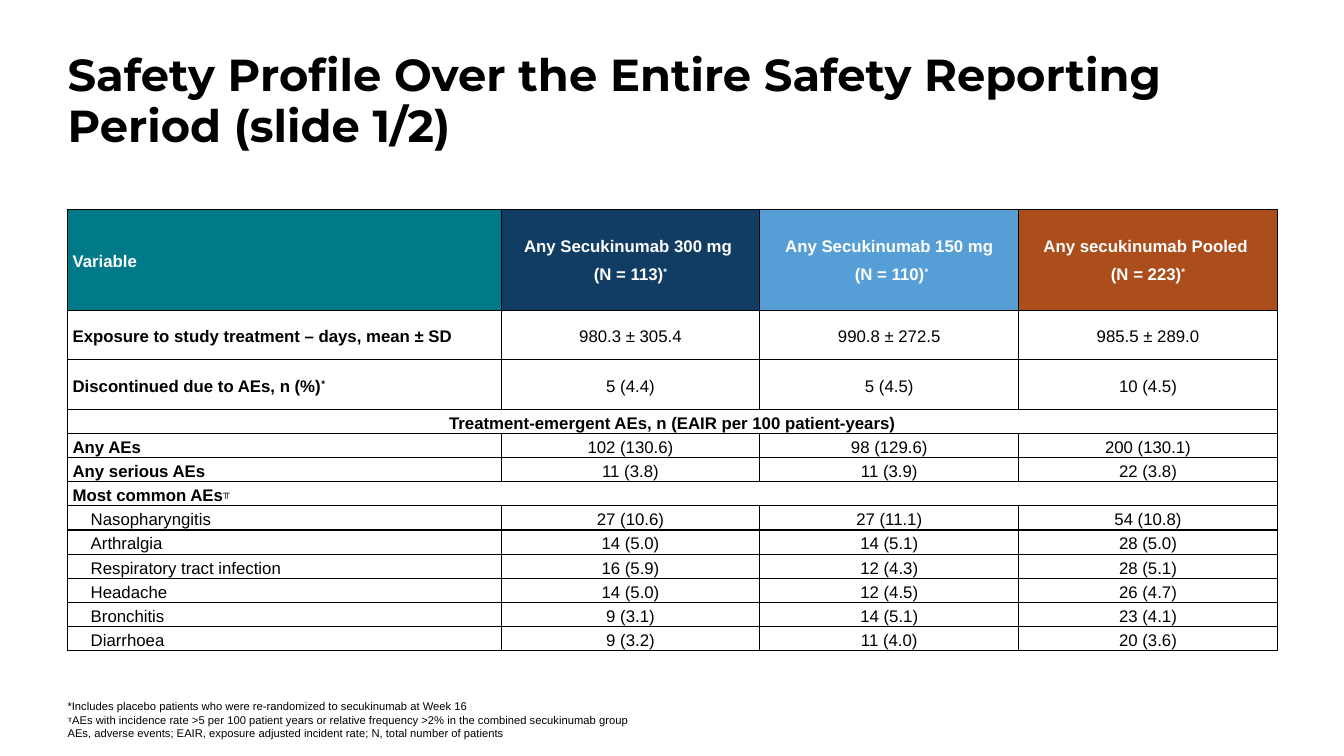
import dataclasses
import typing

import lxml.etree
import pptx
import pptx.dml.color
import pptx.enum.text
import pptx.oxml.ns
import pptx.util

Inches = pptx.util.Inches
Pt = pptx.util.Pt
qn = pptx.oxml.ns.qn
ALIGN = pptx.enum.text.PP_ALIGN
ANCHOR = pptx.enum.text.MSO_ANCHOR

COLORS = {"black": "000000", "white": "FFFFFF", "teal": "007989",
          "navy": "113C64", "sky": "559ED6", "rust": "AC4E1B"}
LEFT, WIDTH = 0.67, 12
FIRST = 4.3  # width of the label column
ARMS = 3


@dataclasses.dataclass
class Style:
    size: float
    bold: bool = False
    color: str = "black"
    face: str = "Arial"
    align: typing.Any = ALIGN.LEFT
    line: float = 1.0
    after: float = 0
    indent: float = 0


@dataclasses.dataclass
class Row:
    label: str
    values: tuple = ()
    height: float = 0.24
    sub: bool = False
    center: bool = False


# Text between carets is raised
HEADS = [("Variable", "teal"),
         ("Any Secukinumab 300 mg \n(N = 113)^*^", "navy"),
         ("Any Secukinumab 150 mg\n (N = 110)^*^", "sky"),
         ("Any secukinumab Pooled \n(N = 223)^*^", "rust")]
ROWS = [
    Row("Exposure to study treatment – days, mean ± SD",
        ("980.3 ± 305.4", "990.8 ± 272.5", "985.5 ± 289.0"), height=0.49),
    Row("Discontinued due to AEs, n (%)^*^",
        ("5 (4.4)", "5 (4.5)", "10 (4.5)"), height=0.49),
    Row("Treatment-emergent AEs, n (EAIR per 100 patient-years)", center=True),
    Row("Any AEs", ("102 (130.6)", "98 (129.6)", "200 (130.1)")),
    Row("Any serious AEs", ("11 (3.8)", "11 (3.9)", "22 (3.8)")),
    Row("Most common AEs^╥^"),
    Row("Nasopharyngitis", ("27 (10.6)", "27 (11.1)", "54 (10.8)"), sub=True),
    Row("Arthralgia", ("14 (5.0)", "14 (5.1)", "28 (5.0)"), sub=True),
    Row("Respiratory tract infection",
        ("16 (5.9)", "12 (4.3)", "28 (5.1)"), sub=True),
    Row("Headache", ("14 (5.0)", "12 (4.5)", "26 (4.7)"), sub=True),
    Row("Bronchitis", ("9 (3.1)", "14 (5.1)", "23 (4.1)"), sub=True),
    Row("Diarrhoea", ("9 (3.2)", "11 (4.0)", "20 (3.6)"), sub=True),
]
NOTES = """*Includes placebo patients who were re-randomized to secukinumab at Week 16
^╥^AEs with incidence rate >5 per 100 patient years or relative frequency >2% in the combined secukinumab group
AEs, adverse events; EAIR, exposure adjusted incident rate; N, total number of patients"""


def apply(target: typing.Any, values: dict) -> None:
    for name, value in values.items():
        setattr(target, name, value)


def tint(name: str) -> pptx.dml.color.RGBColor:
    return pptx.dml.color.RGBColor.from_string(COLORS[name])


def write(frame: typing.Any, text: str, style: Style) -> None:
    for spot, line in enumerate(text.split("\n")):
        para = frame.add_paragraph() if spot else frame.paragraphs[0]
        apply(para, {"alignment": style.align, "line_spacing": style.line,
                     "space_before": Pt(0), "space_after": Pt(style.after)})
        if style.indent:
            para._p.get_or_add_pPr().set("marL", str(Inches(style.indent)))
        for index, part in enumerate(line.split("^")):
            if not part:
                continue
            run = para.add_run()
            run.text = part
            apply(run.font, {"size": Pt(style.size), "bold": style.bold,
                             "name": style.face})
            run.font.color.rgb = tint(style.color)
            if index % 2:
                run._r.get_or_add_rPr().set("baseline", "30000")


def flush(frame: typing.Any, anchor: typing.Any) -> None:
    apply(frame, {"margin_left": 0, "margin_right": 0, "margin_top": 0,
                  "margin_bottom": 0, "word_wrap": True,
                  "auto_size": pptx.enum.text.MSO_AUTO_SIZE.NONE,
                  "vertical_anchor": anchor})


def outline(cell: typing.Any) -> None:
    props = cell._tc.get_or_add_tcPr()
    for side in ("a:lnL", "a:lnR", "a:lnT", "a:lnB"):
        edge = lxml.etree.SubElement(props, qn(side), w=str(Pt(1)))
        fill = lxml.etree.SubElement(edge, qn("a:solidFill"))
        lxml.etree.SubElement(fill, qn("a:srgbClr"), val=COLORS["black"])


def prepare(cell: typing.Any, side: float) -> None:
    apply(cell, {"margin_left": Inches(side), "margin_right": Inches(side),
                 "margin_top": Inches(0.01), "margin_bottom": 0,
                 "vertical_anchor": ANCHOR.MIDDLE})
    outline(cell)
    cell.fill.background()


def fill_row(table: typing.Any, index: int, row: Row) -> None:
    table.rows[index].height = Inches(row.height)
    label = Style(12, bold=not row.sub, line=1.15, after=10,
                  indent=0.18 if row.sub else 0)
    if row.center:
        apply(label, {"align": ALIGN.CENTER, "after": 0})
    write(table.cell(index, 0).text_frame, row.label, label)
    if not row.values:
        table.cell(index, 0).merge(table.cell(index, ARMS))
    value = Style(12, align=ALIGN.CENTER, line=1.15,
                  after=10 if row.sub else 0)
    for col, text in enumerate(row.values, 1):
        write(table.cell(index, col).text_frame, text, value)


def draw_table(slide: typing.Any) -> None:
    height = 1 + sum(row.height for row in ROWS)
    table = slide.shapes.add_table(
        len(ROWS) + 1, ARMS + 1, Inches(LEFT), Inches(2.08),
        Inches(WIDTH), Inches(height)).table
    apply(table, {"first_row": False, "horz_banding": False})
    for col, column in enumerate(table.columns):
        column.width = Inches((WIDTH - FIRST) / ARMS if col else FIRST)
        for index in range(len(ROWS) + 1):
            tight = col == ARMS or (index == 0 and col == 2)
            prepare(table.cell(index, col), 0.01 if tight else 0.05)

    # Header row
    table.rows[0].height = Inches(1)
    for col, (text, color) in enumerate(HEADS):
        cell = table.cell(0, col)
        cell.fill.solid()
        cell.fill.fore_color.rgb = tint(color)
        style = Style(12, bold=True, color="white", line=1.15, after=10)
        if col:
            apply(style, {"align": ALIGN.CENTER, "line": 1.0, "after": 6})
        write(cell.text_frame, text, style)

    # Body rows
    for index, row in enumerate(ROWS, 1):
        fill_row(table, index, row)


def main() -> None:
    deck = pptx.Presentation()
    apply(deck, {"slide_width": Inches(13.33), "slide_height": Inches(7.5)})
    slide = deck.slides.add_slide(deck.slide_layouts[5])

    # Title
    title = slide.shapes.title
    apply(title, {"left": Inches(LEFT), "top": Inches(0.5),
                  "width": Inches(WIDTH), "height": Inches(1.14)})
    flush(title.text_frame, ANCHOR.TOP)
    write(title.text_frame,
          "Safety Profile Over the Entire Safety Reporting Period (slide 1/2)",
          Style(32, bold=True, face="Montserrat", line=0.95))

    # Footnotes
    notes = slide.shapes.add_textbox(Inches(LEFT), Inches(6.48),
                                     Inches(9.67), Inches(0.86))
    flush(notes.text_frame, ANCHOR.BOTTOM)
    write(notes.text_frame, NOTES, Style(8))

    draw_table(slide)
    deck.save("out.pptx")


if __name__ == "__main__":
    main()
